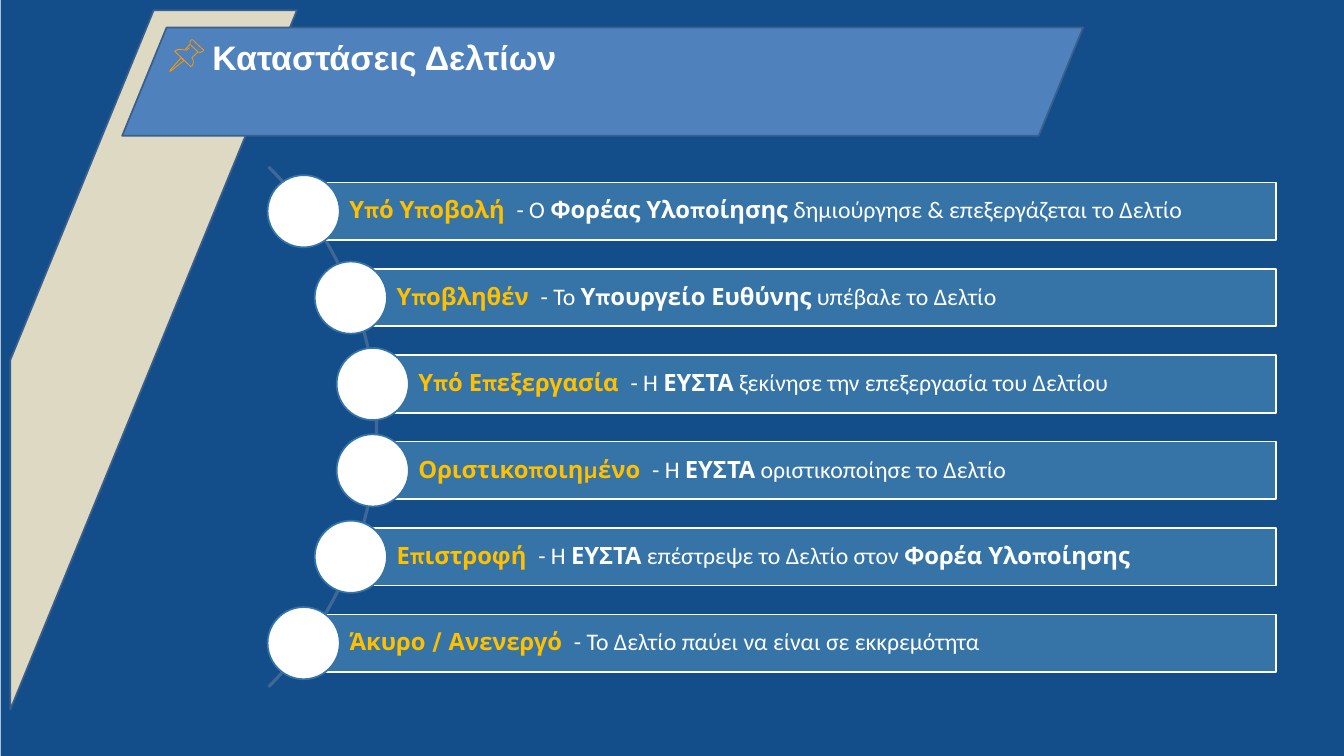
from dataclasses import dataclass

from pptx import Presentation
from pptx import util as u
from pptx.dml.color import RGBColor
from pptx.enum import shapes, text

COLORS = {
    "background": "134E8A", "stripe": "DDD9C3", "banner": "4F81BD",
    "banner_line": "3A5F8C", "pin": "FF9800", "arc": "3F6797",
    "bar": "3674A8", "term": "FFC000", "white": "FFFFFF",
}
SHAPE = shapes.MSO_SHAPE

# Status list geometry, in cm
FIRST_CENTER, ROW_PITCH = 8.78, 3.59
BAR_HEIGHT, BAR_RIGHT, CIRCLE = 2.39, 53.02, 3.0


@dataclass
class Status:
    center_x: float
    term: str
    wording: tuple[str, ...]  # plain and bold in turn


@dataclass
class Stroke:
    points: list[tuple[float, float]]
    closed: bool


STATUSES = [
    Status(12.62, "Υπό Υποβολή",
           ("- Ο ", "Φορέας Υλοποίησης", " δημιούργησε & επεξεργάζεται το Δελτίο")),
    Status(14.58, "Υποβληθέν", ("- Το ", "Υπουργείο Ευθύνης", " υπέβαλε το Δελτίο")),
    Status(15.49, "Υπό Επεξεργασία",
           ("- Η ", "ΕΥΣΤΑ", " ξεκίνησε την επεξεργασία του Δελτίου")),
    Status(15.49, "Οριστικοποιημένο", ("- Η ", "ΕΥΣΤΑ", " οριστικοποίησε το Δελτίο")),
    Status(14.58, "Επιστροφή",
           ("- Η ", "ΕΥΣΤΑ", " επέστρεψε το Δελτίο στον ", "Φορέα Υλοποίησης")),
    Status(12.62, "Άκυρο / Ανενεργό", ("- Το Δελτίο παύει να είναι σε εκκρεμότητα",)),
]

PIN = [
    # Needle
    Stroke([(7.52, 2.41), (7.09, 2.9), (7.06, 2.97), (7.14, 2.92), (7.65, 2.51)], True),
    # Head
    Stroke([(7.9, 1.85), (8.23, 2.16), (8.33, 2.18), (8.43, 2.13), (8.46, 2.08),
            (8.0, 1.65), (7.95, 1.65), (7.9, 1.73)], True),
    # Body
    Stroke([(7.9, 1.85), (7.67, 2.08), (7.54, 2.06), (7.39, 2.06), (7.29, 2.11),
            (7.26, 2.13), (7.29, 2.16), (7.9, 2.74), (7.92, 2.77), (7.98, 2.74),
            (8.03, 2.64), (8.03, 2.51), (7.98, 2.39), (8.23, 2.16)], False),
    # Glint
    Stroke([(7.72, 2.11), (7.87, 1.98)], False),
]


def color(name: str) -> RGBColor:
    return RGBColor.from_string(COLORS[name])


def paint(sp, fill: str | None, line: str | None, width: float = 2) -> None:
    sp.shadow.inherit = False
    if fill:
        sp.fill.solid()
        sp.fill.fore_color.rgb = color(fill)
    else:
        sp.fill.background()
    if line:
        sp.line.color.rgb = color(line)
        sp.line.width = u.Pt(width)
    else:
        sp.line.fill.background()


def add_shape(s, kind, x: float, y: float, w: float, h: float,
              fill: str | None, line: str | None):
    sp = s.shapes.add_shape(kind, u.Cm(x), u.Cm(y), u.Cm(w), u.Cm(h))
    paint(sp, fill, line)
    return sp


def add_run(p, words: str, font: str, size: float, fill: str, bold: bool):
    r = p.add_run()
    r.text = words
    r.font.name = font
    r.font.size = u.Pt(size)
    r.font.bold = bold
    r.font.color.rgb = color(fill)
    return r


def add_stroke(s, stroke: Stroke) -> None:
    points = [(u.Cm(x), u.Cm(y)) for x, y in stroke.points]
    builder = s.shapes.build_freeform(*points[0])
    builder.add_line_segments(points[1:], close=stroke.closed)
    paint(builder.convert_to_shape(), None, "pin", 0.96)


def add_status(s, status: Status, center_y: float) -> None:
    x = status.center_x
    bar = add_shape(s, SHAPE.RECTANGLE, x, center_y - BAR_HEIGHT / 2,
                    BAR_RIGHT - x, BAR_HEIGHT, "bar", "white")
    tf = bar.text_frame
    tf.word_wrap = True
    tf.vertical_anchor = text.MSO_ANCHOR.MIDDLE
    tf.margin_left = u.Cm(1.9)
    tf.margin_right = tf.margin_top = tf.margin_bottom = u.Cm(0.2)
    p = tf.paragraphs[0]
    p.alignment = text.PP_ALIGN.LEFT
    p.line_spacing = 0.9
    add_run(p, status.term, "Karla", 28, "term", True)
    gap = add_run(p, " ", "Karla", 28, "term", True)
    gap._r.get_or_add_rPr().set("spc", "700")  # widens the gap after the term
    for i, words in enumerate(status.wording):
        bold = i % 2 == 1
        add_run(p, words, "Karla" if bold else "Calibri", 28, "white", bold)
    add_shape(s, SHAPE.OVAL, x - CIRCLE / 2, center_y - CIRCLE / 2,
              CIRCLE, CIRCLE, "white", "bar")


def main() -> None:
    prs = Presentation()
    prs.slide_width, prs.slide_height = u.Cm(55.85), u.Cm(31.42)
    s = prs.slides.add_slide(prs.slide_layouts[6])

    # Backdrop, diagonal stripe and title banner
    add_shape(s, SHAPE.RECTANGLE, 0.03, 0, 55.82, 31.42, "background", None)
    add_shape(s, SHAPE.DIAGONAL_STRIPE, 0.43, 0.43, 11.91, 29.06, "stripe", "banner_line")
    banner = add_shape(s, SHAPE.PARALLELOGRAM, 5.08, 1.14, 39.93, 4.5,
                       "banner", "banner_line")
    banner.adjustments[0] = 0.41

    # Title with its pin
    title = s.shapes.add_textbox(u.Cm(8.58), u.Cm(1.4), u.Cm(29.62), u.Cm(1.96))
    title.text_frame.word_wrap = True
    add_run(title.text_frame.paragraphs[0], "Καταστάσεις Δελτίων",
            "Arial", 40, "white", True)
    for stroke in PIN:
        add_stroke(s, stroke)

    # Arc behind the circles
    arc = add_shape(s, SHAPE.BLOCK_ARC, -14.88, 2.46, 30.56, 30.56, None, "arc")
    for i, value in enumerate((189, 27, 0.002)):
        arc.adjustments[i] = value

    # Statuses
    for i, status in enumerate(STATUSES):
        add_status(s, status, FIRST_CENTER + i * ROW_PITCH)

    prs.save("out.pptx")


if __name__ == "__main__":
    main()
